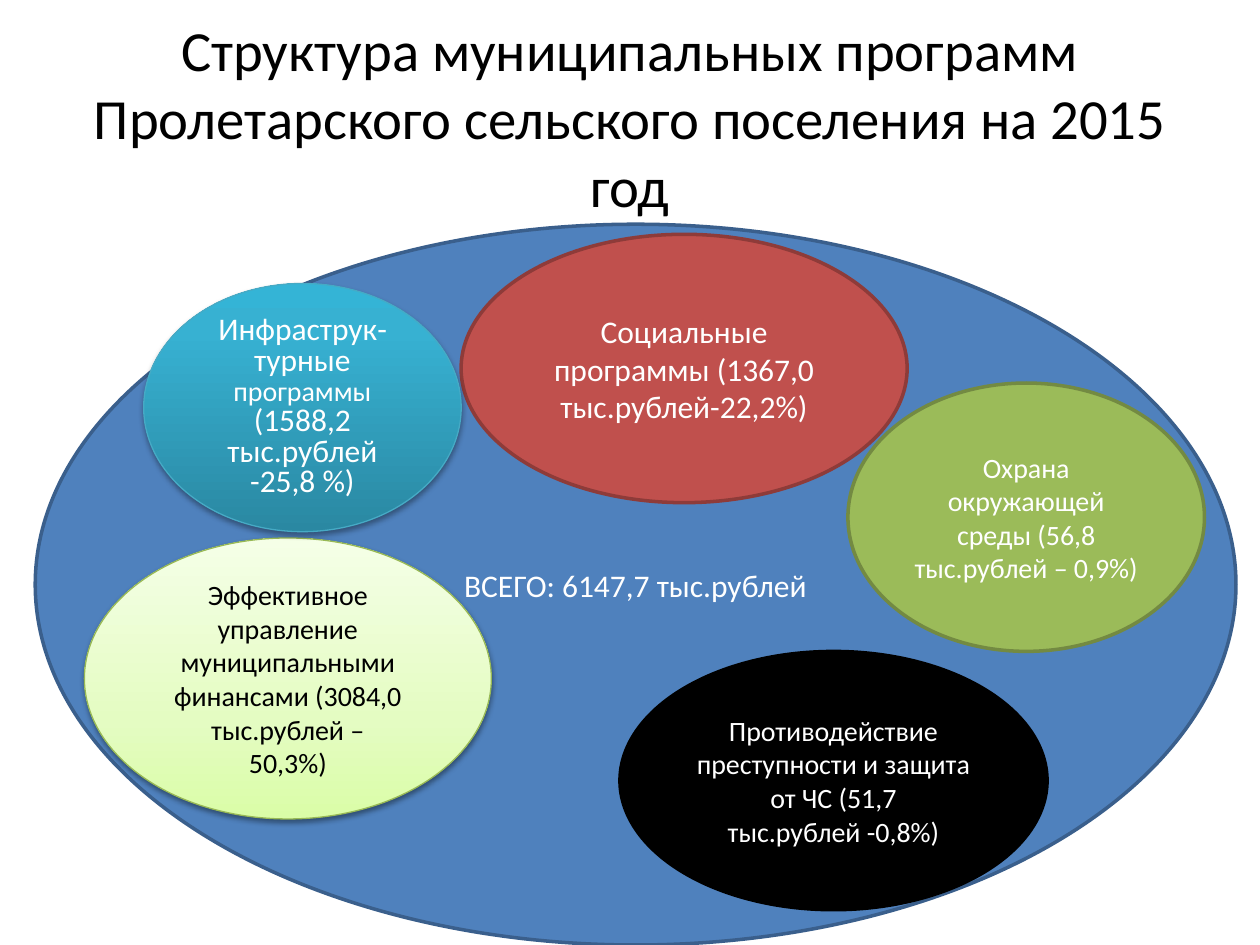
from dataclasses import dataclass
from typing import Optional

from lxml.etree import SubElement
from pptx import Presentation
from pptx.dml.color import RGBColor
from pptx.enum.shapes import MSO_SHAPE
from pptx.enum.text import MSO_ANCHOR, MSO_AUTO_SIZE, PP_ALIGN
from pptx.oxml.ns import qn
from pptx.util import Inches, Pt

# The slide is a grid of 100 columns by 75 rows
COLUMNS, ROWS = 100, 75
WIDTH, HEIGHT = Inches(10), Inches(7.5)
FONT = "Calibri"
WHITE, BLACK = "FFFFFF", "000000"


@dataclass(frozen=True)
class Shadow:
    opacity: int
    blur: float
    distance: float


@dataclass(frozen=True)
class Bubble:
    box: tuple[float, float, float, float]  # column, row, columns, rows
    paragraphs: list
    fill: str | list[tuple[int, str]]  # one colour, or stops from the bottom up
    line: str
    size: float = 16
    color: str = WHITE
    line_width: float = 2
    line_spacing: Optional[float] = None
    shadow: Optional[Shadow] = None


BUBBLES = [
    # The whole budget
    Bubble((2.8, 17.8, 95.3, 57.2), ["ВСЕГО: 6147,7 тыс.рублей"],
           "4F81BD", "3A5F8C", size=18),
    # The programmes
    Bubble((36.6, 18.6, 35.4, 21.3),
           ["Социальные программы (1367,0 тыс.рублей-22,2%)"],
           "C0504D", "8E3B39", size=18),
    Bubble((67.3, 30.4, 28.3, 21.3),
           ["Охрана окружающей среды (56,8 тыс.рублей – 0,9%)"],
           "9BBB59", "738A42"),
    Bubble((49.2, 51.7, 33.9, 20.5),
           ["Противодействие преступности и защита от ЧС (51,7",
            "тыс.рублей -0,8%)"],
           BLACK, BLACK),
    Bubble((6.7, 42.7, 32.3, 22.3),
           ["Эффективное управление муниципальными финансами "
            "(3084,0 тыс.рублей –", "50,3%)"],
           [(0, "DAFDA7"), (35, "E4FCC2"), (100, "F5FFE7")], "98B955",
           color=BLACK, line_width=0.75, shadow=Shadow(38, 3.1, 1.6)),
    Bubble((11.4, 22.5, 25.2, 19.7),
           [["Инфраструк-турные ", ("программы", 16),
             " (1588,2 тыс.рублей -25,8 %)"]],
           [(0, "2A88A2"), (80, "37B1D2"), (100, "34B4D6")], "46AAC5",
           size=18, line_width=0.75, line_spacing=0.8,
           shadow=Shadow(35, 3.1, 1.8)),
]


def rgb(value: str) -> RGBColor:
    return RGBColor.from_string(value)


def place(box: tuple[float, float, float, float]) -> tuple[int, ...]:
    """Turn grid units into slide lengths."""
    units = (WIDTH / COLUMNS, HEIGHT / ROWS) * 2
    return tuple(round(length * unit) for length, unit in zip(box, units))


def write_text(shape, paragraphs: list, *, size: float, color: str,
               line_spacing: Optional[float] = None) -> None:
    """Write centred paragraphs; a run is a text or a (text, size) pair."""
    frame = shape.text_frame
    frame.word_wrap = True
    frame.auto_size = MSO_AUTO_SIZE.NONE
    frame.vertical_anchor = MSO_ANCHOR.MIDDLE
    for index, content in enumerate(paragraphs):
        paragraph = frame.add_paragraph() if index else frame.paragraphs[0]
        paragraph.alignment = PP_ALIGN.CENTER
        paragraph.line_spacing = line_spacing
        for part in [content] if isinstance(content, str) else content:
            text, run_size = (part, size) if isinstance(part, str) else part
            run = paragraph.add_run()
            run.text = text
            run.font.name = FONT
            run.font.size = Pt(run_size)
            run.font.color.rgb = rgb(color)


def fill_gradient(shape, stops: list[tuple[int, str]]) -> None:
    """Fill upwards; the stop list needs XML for more than two stops."""
    shape.fill.gradient()
    shape.fill.gradient_angle = 90
    stop_list = shape.element.spPr.find(qn("a:gradFill")).find(qn("a:gsLst"))
    for stop in list(stop_list):
        stop_list.remove(stop)
    for position, color in stops:
        stop = SubElement(stop_list, qn("a:gs"), pos=str(position * 1000))
        SubElement(stop, qn("a:srgbClr"), val=color)


def add_shadow(shape, shadow: Shadow) -> None:
    """Cast a black shadow straight down."""
    effects = shape.element.spPr.find(qn("a:effectLst"))
    outer = SubElement(effects, qn("a:outerShdw"),
                       blurRad=str(Pt(shadow.blur)),
                       dist=str(Pt(shadow.distance)),
                       dir=str(90 * 60000), rotWithShape="0")
    color = SubElement(outer, qn("a:srgbClr"), val=BLACK)
    SubElement(color, qn("a:alpha"), val=str(shadow.opacity * 1000))


def draw_bubble(slide, bubble: Bubble) -> None:
    shape = slide.shapes.add_shape(MSO_SHAPE.OVAL, *place(bubble.box))
    if isinstance(bubble.fill, str):
        shape.fill.solid()
        shape.fill.fore_color.rgb = rgb(bubble.fill)
    else:
        fill_gradient(shape, bubble.fill)
    shape.line.color.rgb = rgb(bubble.line)
    shape.line.width = Pt(bubble.line_width)
    shape.shadow.inherit = False
    if bubble.shadow:
        add_shadow(shape, bubble.shadow)
    write_text(shape, bubble.paragraphs, size=bubble.size, color=bubble.color,
               line_spacing=bubble.line_spacing)


def main() -> None:
    presentation = Presentation()
    presentation.slide_width, presentation.slide_height = WIDTH, HEIGHT
    slide = presentation.slides.add_slide(presentation.slide_layouts[5])

    # Title
    title = slide.shapes.title
    title.left, title.top, title.width, title.height = place((5, 3, 90, 12.5))
    write_text(title, ["Структура муниципальных программ Пролетарского "
                       "сельского поселения на 2015 год"],
               size=32.4, color=BLACK)

    # Budget and programmes, from back to front
    for bubble in BUBBLES:
        draw_bubble(slide, bubble)

    presentation.save("out.pptx")


if __name__ == "__main__":
    main()
